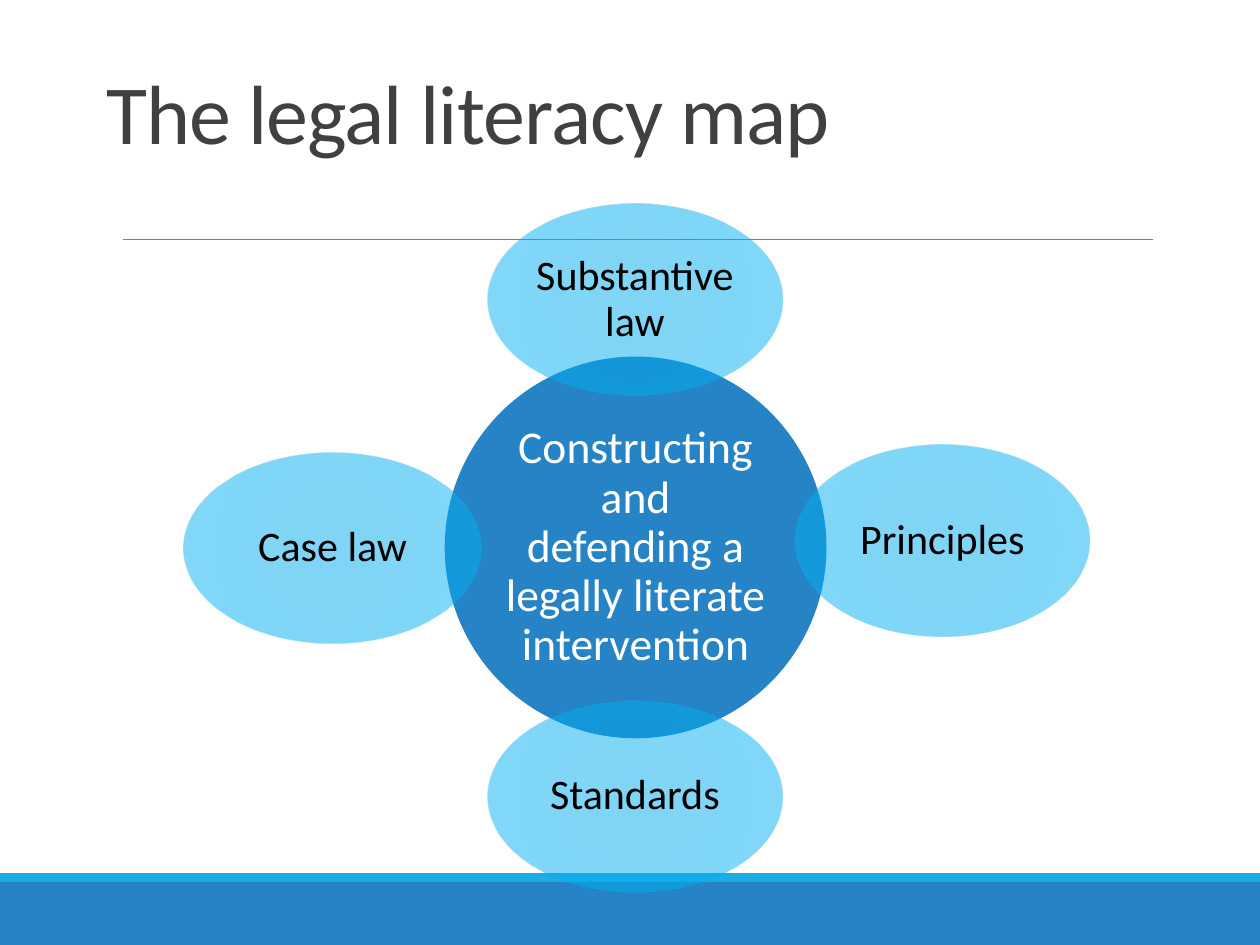
import pptx
import pptx.util
import pptx.dml.color
import pptx.enum.shapes
import pptx.enum.text
import pptx.oxml
import pptx.oxml.ns

Pt = pptx.util.Pt
SHAPE = pptx.enum.shapes.MSO_SHAPE
ALIGN = pptx.enum.text.PP_ALIGN
ANCHOR = pptx.enum.text.MSO_ANCHOR

TITLE = " The legal literacy map"
HUB = ("Constructing and defending a legally literate intervention", 363.24, 312.84, 218.16)
SATELLITES = [
    ("Substantive law", 362.88, 171.36, 168.5),
    ("Principles", 538.56, 308.88, 168.5),
    ("Standards", 362.88, 455.04, 168.5),
    ("Case law", 190.08, 313.2, 169.9),
]
SATELLITE_H = 109.44
BANDS = [(504, 36, "2683C6"), (498.96, 5.04, "1CADE4")]
THEME = {
    "font": "Calibri", "title": "404040", "title_size": 48,
    "hub": "2683C6", "hub_text": "FFFFFF", "hub_size": 26,
    "satellite_text": "000000", "satellite_size": 24, "rule": "808080",
    "glow": [(0, "00ADEF"), (34, "03ADEE"), (70, "00B1F5"), (100, "12B1EE")],
    "alpha": 50,
}


def rgb(value):
    return pptx.dml.color.RGBColor.from_string(value)


def write(s, text, size, color, align=ALIGN.CENTER, anchor=ANCHOR.MIDDLE,
          spacing=0.9, inset=(2.2, 2.2), tracking=0):
    tf = s.text_frame
    tf.word_wrap = True
    tf.vertical_anchor = anchor
    tf.margin_left = tf.margin_right = Pt(inset[0])
    tf.margin_top = tf.margin_bottom = Pt(inset[1])
    p = tf.paragraphs[0]
    p.alignment = align
    p.line_spacing = spacing
    r = p.add_run()
    r.text = text
    r.font.name = THEME["font"]
    r.font.size = Pt(size)
    r.font.color.rgb = rgb(color)
    if tracking:
        r.font._element.set("spc", str(round(tracking * 100)))


def add_shape(slide, kind, left, top, width, height, fill=None):
    s = slide.shapes.add_shape(kind, Pt(left), Pt(top), Pt(width), Pt(height))
    s.shadow.inherit = False
    s.line.fill.background()
    if fill:
        s.fill.solid()
        s.fill.fore_color.rgb = rgb(fill)
    return s


def add_ellipse(slide, cx, cy, width, height, fill=None):
    return add_shape(slide, SHAPE.OVAL, cx - width / 2, cy - height / 2, width, height, fill)


def glow(s):
    stops = "".join(
        f'<a:gs pos="{pos * 1000}"><a:srgbClr val="{color}">'
        f'<a:alpha val="{THEME["alpha"] * 1000}"/></a:srgbClr></a:gs>'
        for pos, color in THEME["glow"])
    grad = pptx.oxml.parse_xml(
        f'<a:gradFill {pptx.oxml.ns.nsdecls("a")} rotWithShape="1"><a:gsLst>{stops}</a:gsLst>'
        '<a:path path="circle"><a:fillToRect l="100000" t="100000" r="100000" b="100000"/>'
        '</a:path></a:gradFill>')
    s._element.spPr.find(pptx.oxml.ns.qn("a:prstGeom")).addnext(grad)


def main():
    prs = pptx.Presentation()
    prs.slide_width, prs.slide_height = Pt(720), Pt(540)
    slide = prs.slides.add_slide(prs.slide_layouts[6])

    for top, height, color in BANDS:
        add_shape(slide, SHAPE.RECTANGLE, 0, top, 720, height, color)

    rule = slide.shapes.add_connector(
        pptx.enum.shapes.MSO_CONNECTOR.STRAIGHT, Pt(70.4), Pt(136.8), Pt(658.8), Pt(136.8))
    rule.line.color.rgb = rgb(THEME["rule"])
    rule.line.width = Pt(0.5)
    rule._element.spPr.append(
        pptx.oxml.parse_xml(f'<a:effectLst {pptx.oxml.ns.nsdecls("a")}/>'))

    title = slide.shapes.add_textbox(Pt(43.2), Pt(8.64), Pt(633.6), Pt(87.12))
    write(title, TITLE, THEME["title_size"], THEME["title"], align=ALIGN.LEFT,
          anchor=ANCHOR.BOTTOM, spacing=0.85, inset=(7.2, 3.6), tracking=-0.5)

    text, cx, cy, size = HUB
    hub = add_ellipse(slide, cx, cy, size, size, THEME["hub"])
    write(hub, text, THEME["hub_size"], THEME["hub_text"], inset=(2.9, 2.9))

    for text, cx, cy, width in SATELLITES:
        s = add_ellipse(slide, cx, cy, width, SATELLITE_H)
        glow(s)
        write(s, text, THEME["satellite_size"], THEME["satellite_text"])

    prs.save("out.pptx")


if __name__ == "__main__":
    main()
